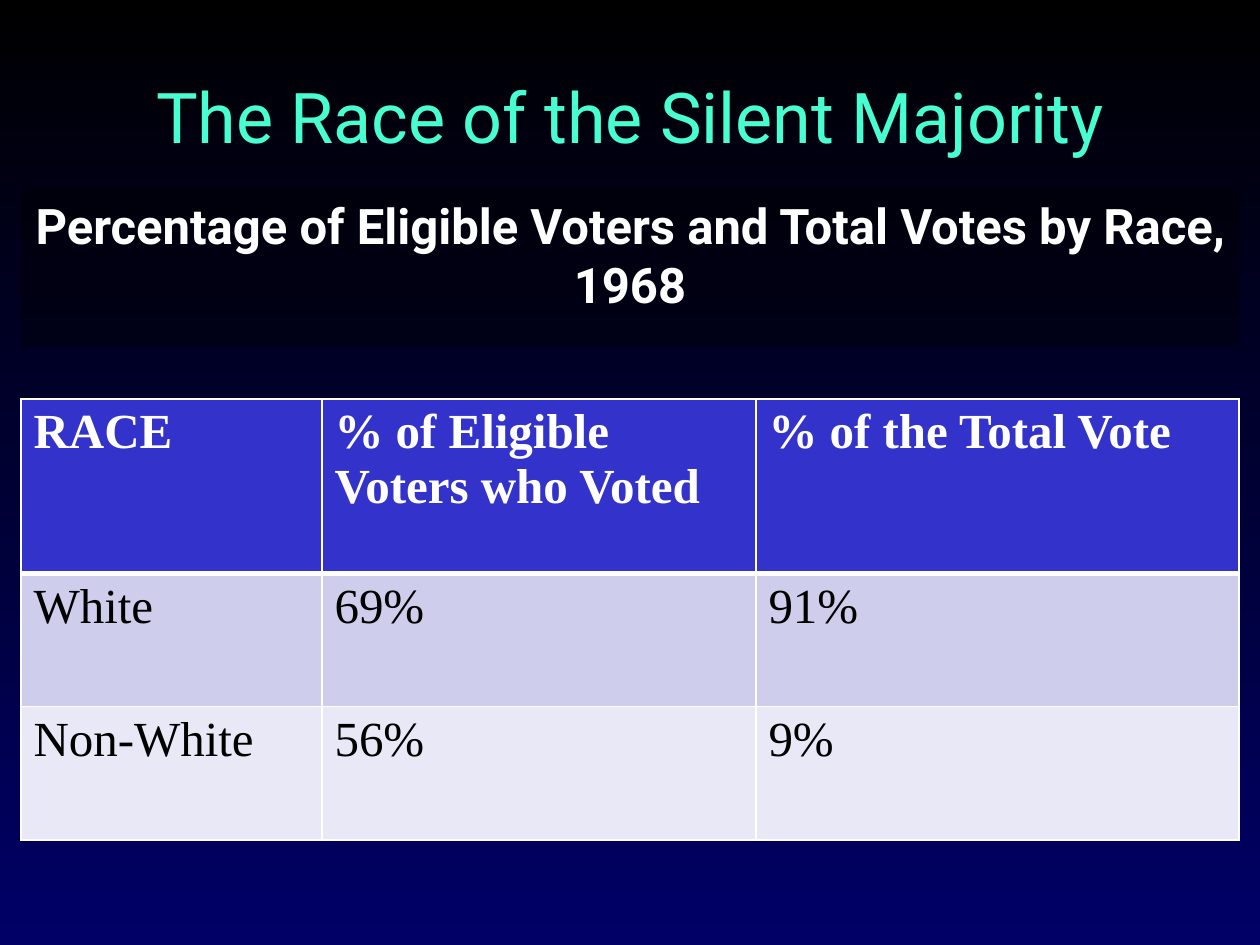
from lxml.etree import SubElement
from pptx import Presentation
from pptx.dml.color import RGBColor
from pptx.enum.shapes import MSO_SHAPE
from pptx.enum.text import MSO_ANCHOR, MSO_AUTO_SIZE, PP_ALIGN
from pptx.oxml.ns import qn
from pptx.util import Pt

TITLE = "The Race of the Silent Majority"
CAPTION = "Percentage of Eligible Voters and Total Votes by Race, 1968"
ROWS = [
    ("RACE", "% of Eligible Voters who Voted", "% of the Total Vote"),
    ("White", "69%", "91%"),
    ("Non-White", "56%", "9%"),
]
FILLS = ["3333CC", "CECEEC", "E8E8F6"]
WIDTHS = [172, 248, 276]
HEIGHTS = [99.6, 76.2, 76.2]
LEFT, WIDE = 12, sum(WIDTHS)

HEAD = {"name": "Roboto", "size": Pt(40), "bold": False}
SUB = {"name": "Roboto", "size": Pt(28), "bold": True}
CELL = {"name": "Times New Roman", "size": Pt(28)}


def color(code):
    return RGBColor.from_string(code)


def paint(fill, code):
    fill.solid()
    fill.fore_color.rgb = color(code)


def write(frame, text, style, code, align):
    frame.word_wrap = True
    para = frame.paragraphs[0]
    para.alignment = align
    run = para.add_run()
    run.text = text
    for key, value in style.items():
        setattr(run.font, key, value)
    run.font.color.rgb = color(code)


def edge(cell, side, width):
    """Draw one white border of a cell; call before the cell is filled."""
    line = SubElement(cell._tc.get_or_add_tcPr(), qn(f"a:ln{side}"), w=str(Pt(width)))
    solid = SubElement(line, qn("a:solidFill"))
    SubElement(solid, qn("a:srgbClr"), val="FFFFFF")


deck = Presentation()
deck.slide_width, deck.slide_height = Pt(720), Pt(540)
slide = deck.slides.add_slide(deck.slide_layouts[5])

back = slide.background.fill
back.gradient()
back.gradient_angle = 270
for stop, (place, code) in zip(back.gradient_stops, [(0, "000000"), (1, "000066")]):
    stop.position = place
    stop.color.rgb = color(code)

title = slide.shapes.title
title.left, title.top, title.width, title.height = Pt(24), Pt(36), Pt(672), Pt(60)
title.text_frame.auto_size = MSO_AUTO_SIZE.NONE
title.text_frame.vertical_anchor = MSO_ANCHOR.MIDDLE
write(title.text_frame, TITLE, HEAD, "47FFD1", PP_ALIGN.CENTER)

grid = slide.shapes.add_table(
    len(ROWS), len(WIDTHS), Pt(LEFT), Pt(228), Pt(WIDE), Pt(sum(HEIGHTS))
).table
for col, width in zip(grid.columns, WIDTHS):
    col.width = Pt(width)
for r, (row, height) in enumerate(zip(grid.rows, HEIGHTS)):
    row.height = Pt(height)
    first = r == 0
    for cell, text in zip(row.cells, ROWS[r]):
        for side in "LRTB":
            thick = (side == "B" and r == 0) or (side == "T" and r == 1)
            edge(cell, side, 3 if thick else 1)
        paint(cell.fill, FILLS[r])
        write(cell.text_frame, text, {**CELL, "bold": first},
              "FFFFFF" if first else "000000", PP_ALIGN.LEFT)

band = slide.shapes.add_shape(MSO_SHAPE.RECTANGLE, Pt(LEFT), Pt(108), Pt(WIDE), Pt(90))
band.shadow.inherit = False
band.line.fill.background()
paint(band.fill, "000000")
tint = band.fill._xPr.find(qn("a:solidFill"))[0]
SubElement(tint, qn("a:alpha"), val="37000")
band.text_frame.vertical_anchor = MSO_ANCHOR.TOP
write(band.text_frame, CAPTION, SUB, "FFFFFF", PP_ALIGN.CENTER)

deck.save("out.pptx")
